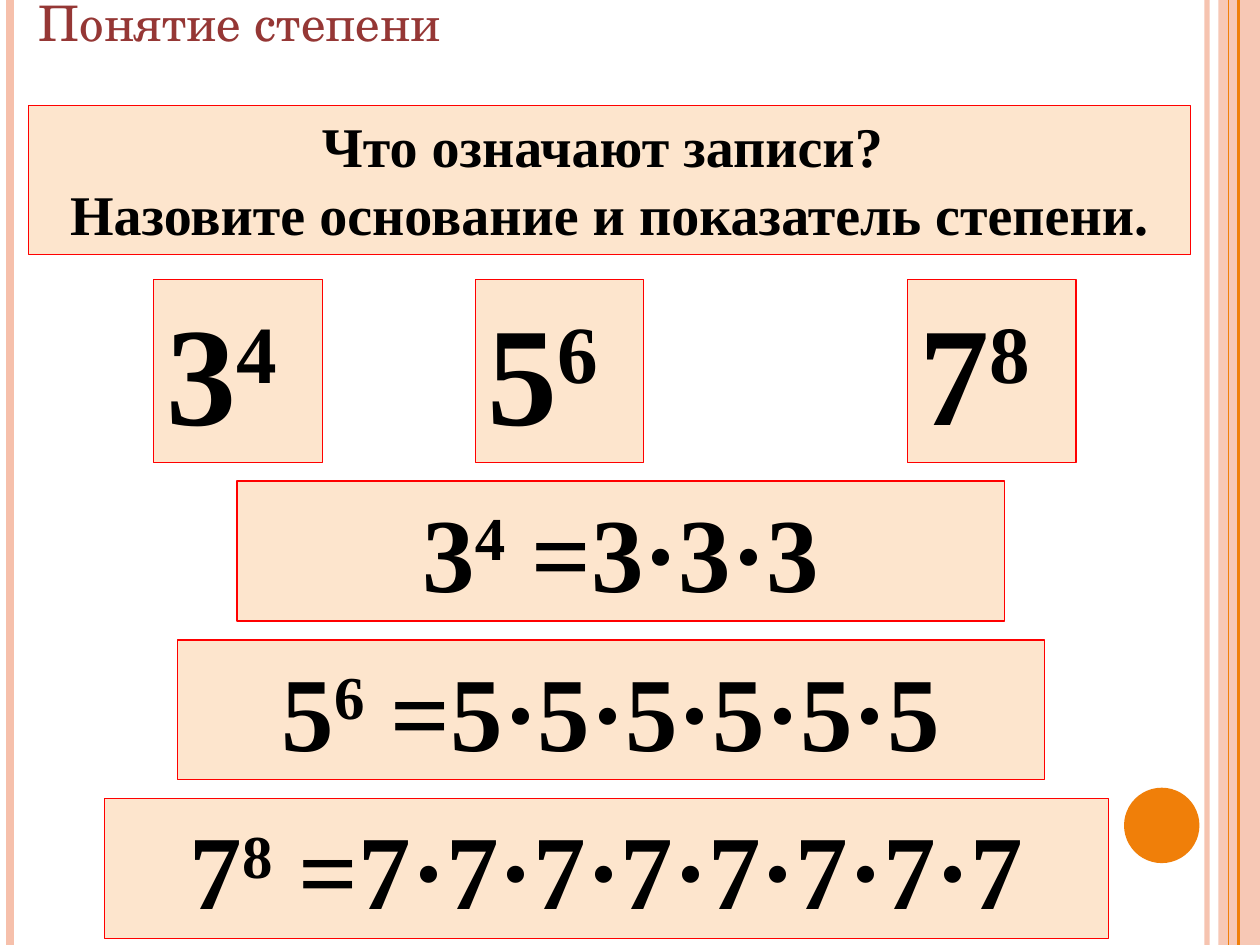
from lxml.etree import SubElement
from pptx import Presentation
from pptx.dml.color import RGBColor
from pptx.enum.shapes import MSO_CONNECTOR as Connector, MSO_SHAPE as Shape
from pptx.enum.text import MSO_ANCHOR as Anchor, PP_ALIGN as Align
from pptx.oxml.ns import qn
from pptx.util import Cm, Pt

TITLE = "Понятие степени"
QUESTION = ["Что означают записи? ", "Назовите основание и показатель степени."]
POWERS = [("3", "4", 3.1), ("5", "6", 9.58), ("7", "8", 18.29)]
EXPANSIONS = [
    ("3", "4", " =3·3·3", 4.78, 15.47),
    ("5", "6", " =5·5·5·5·5·5", 3.58, 17.48),
    ("7", "8", " =7·7·7·7·7·7·7·7", 2.11, 20.24),
]
STRIPES = [
    (24.33, "F6C0AB", 3, 93),
    (0.2, "F6C0AB", 4.5, 100),
    (24.97, "F07F09", 1.5, 100),
    (24.77, "F07F09", 0.75, 100),
]
WIDTH, HEIGHT = 25.4, 19.05
EXPANSION_TOP, EXPANSION_STEP = 9.7, 3.2
FONT = "Times New Roman"


def color(value):
    return RGBColor.from_string(value)


def set_alpha(fill, percent):
    """Make a solid fill partly transparent."""
    srgb = fill._xPr.find(".//" + qn("a:srgbClr"))
    SubElement(srgb, qn("a:alpha"), val=str(percent * 1000))


def add_stripe(slide, x, tint, weight, opacity):
    """Draw a vertical line over the full slide height."""
    stripe = slide.shapes.add_connector(
        Connector.STRAIGHT, Cm(x), Cm(0), Cm(x), Cm(HEIGHT))
    stripe.line.color.rgb = color(tint)
    stripe.line.width = Pt(weight)
    set_alpha(stripe.line.fill, opacity)
    SubElement(stripe._element.spPr, qn("a:effectLst"))


def add_filled(slide, kind, box, tint):
    """Add a flat shape without an outline."""
    shape = slide.shapes.add_shape(kind, *map(Cm, box))
    shape.shadow.inherit = False
    shape.fill.solid()
    shape.fill.fore_color.rgb = color(tint)
    shape.line.fill.background()
    return shape


def add_card(slide, box, paragraphs, size, align=Align.CENTER):
    """Add a red-edged card; every second run of a paragraph is raised."""
    card = add_filled(slide, Shape.RECTANGLE, box, "FDE5CD")
    card.line.color.rgb = color("FF0000")
    card.line.width = Pt(0.75)
    frame = card.text_frame
    frame.word_wrap = True
    frame.vertical_anchor = Anchor.TOP
    for index, parts in enumerate(paragraphs):
        paragraph = frame.add_paragraph() if index else frame.paragraphs[0]
        paragraph.alignment = align
        for position, part in enumerate(parts):
            run = paragraph.add_run()
            run.text = part
            run.font.name, run.font.size, run.font.bold = FONT, Pt(size), True
            run.font.color.rgb = color("000000")
            if position == 1:
                run.font._element.set("baseline", "30000")


def add_title(slide):
    """Place and format the title placeholder."""
    title = slide.shapes.title
    title.left, title.top, title.width, title.height = map(
        Cm, (0.53, -0.28, 8.71, 1.45))
    frame = title.text_frame
    frame.text = TITLE
    frame.word_wrap = False
    frame.vertical_anchor = Anchor.TOP
    frame.paragraphs[0].alignment = Align.LEFT
    font = frame.paragraphs[0].runs[0].font
    font.name, font.size = "TeX Gyre Schola", Pt(28)
    font.color.rgb = color("953735")


def main():
    deck = Presentation()
    deck.slide_width, deck.slide_height = Cm(WIDTH), Cm(HEIGHT)
    slide = deck.slides.add_slide(deck.slide_layouts[5])
    add_title(slide)
    band = add_filled(slide, Shape.RECTANGLE, (24.56, 0, 0.84, HEIGHT), "F6C0AB")
    set_alpha(band.fill, 87)
    for stripe in STRIPES:
        add_stripe(slide, *stripe)
    add_filled(slide, Shape.OVAL, (22.66, 15.88, 1.52, 1.52), "F07F09")
    add_card(slide, (0.58, 2.13, 23.42, 3), [[line] for line in QUESTION], 32)
    for base, exponent, left in POWERS:
        add_card(slide, (left, 5.64, 3.4, 3.68), [[base, exponent]], 80, Align.LEFT)
    for row, (base, exponent, product, left, width) in enumerate(EXPANSIONS):
        top = EXPANSION_TOP + row * EXPANSION_STEP
        add_card(slide, (left, top, width, 2.82), [[base, exponent, product]], 60)
    deck.save("out.pptx")


if __name__ == "__main__":
    main()
